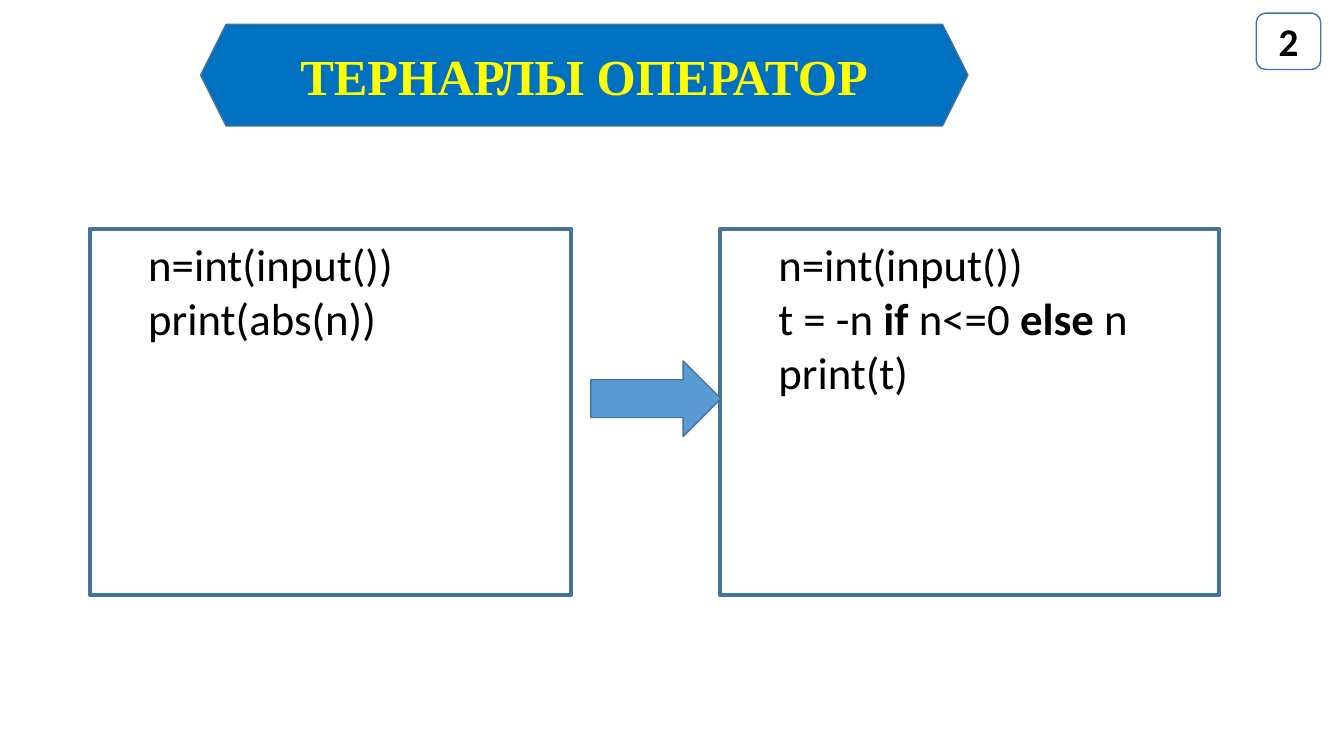
from pptx import Presentation
from pptx.dml.color import RGBColor
from pptx.enum.shapes import MSO_SHAPE as Shape
from pptx.enum.text import MSO_ANCHOR as Anchor, PP_ALIGN as Align
from pptx.util import Inches, Pt

BANNER_BLUE = RGBColor(0x00, 0x70, 0xC0)
ARROW_BLUE = RGBColor(0x5B, 0x9B, 0xD5)
OUTLINE = RGBColor(0x43, 0x73, 0x9E)
YELLOW = RGBColor(0xFF, 0xFF, 0x00)
BLACK = RGBColor(0x00, 0x00, 0x00)

CODE_TOP, CODE_HEIGHT = 2.27, 3.63
ABS_CODE = [[("n=int(input())", False)], [("print(abs(n))", False)]]
TERNARY_CODE = [
    [("n=int(input())", False)],
    [("t = -n ", False), ("if ", True), ("n<=0 ", False), ("else", True), (" n", False)],
    [("print(t)", False)],
]


def add_outlined(slide, kind, box, fill=None, weight=1):
    """Add a preset shape with the common outline and an optional fill."""
    shape = slide.shapes.add_shape(kind, *map(Inches, box))
    shape.shadow.inherit = False
    if fill is None:
        shape.fill.background()
    else:
        shape.fill.solid()
        shape.fill.fore_color.rgb = fill
    shape.line.color.rgb = OUTLINE
    shape.line.width = Pt(weight)
    return shape


def set_font(paragraph, name, size, color):
    """Set typeface, size and colour of a paragraph."""
    font = paragraph.font
    font.name, font.size, font.color.rgb = name, Pt(size), color


def add_label(slide, kind, box, text, name, size, color, fill=None):
    """Add a shape with one centred bold line."""
    shape = add_outlined(slide, kind, box, fill)
    shape.text_frame.vertical_anchor = Anchor.MIDDLE
    paragraph = shape.text_frame.paragraphs[0]
    paragraph.text = text
    paragraph.alignment = Align.CENTER
    set_font(paragraph, name, size, color)
    paragraph.font.bold = True


def add_code_panel(slide, box, lines):
    """Add a framed panel of indented code lines with bold keywords."""
    frame = add_outlined(slide, Shape.RECTANGLE, box, weight=3).text_frame
    frame.word_wrap = True
    frame.vertical_anchor = Anchor.TOP
    frame.margin_left = frame.margin_top = frame.margin_right = Inches(0.08)
    frame.margin_bottom = 0
    for index, line in enumerate(lines):
        paragraph = frame.add_paragraph() if index else frame.paragraphs[0]
        paragraph.level = 1
        paragraph.alignment = Align.LEFT
        properties = paragraph._p.get_or_add_pPr()
        properties.set("marL", str(Inches(0.5)))
        properties.set("indent", "0")
        set_font(paragraph, "Calibri", 32, BLACK)
        for text, bold in line:
            run = paragraph.add_run()
            run.text = text
            run.font.bold = bold


def build_slide(presentation):
    """Build the slide comparing abs with the ternary operator."""
    slide = presentation.slides.add_slide(presentation.slide_layouts[6])
    add_label(slide, Shape.HEXAGON, (1.99, 0.24, 7.61, 1.01), "ТЕРНАРЛЫ ОПЕРАТОР",
              "Times New Roman", 36, YELLOW, BANNER_BLUE)
    add_code_panel(slide, (0.89, CODE_TOP, 4.77, CODE_HEIGHT), ABS_CODE)
    add_code_panel(slide, (7.14, CODE_TOP, 4.95, CODE_HEIGHT), TERNARY_CODE)
    add_outlined(slide, Shape.RIGHT_ARROW, (5.86, 3.58, 1.29, 0.75), ARROW_BLUE)
    add_label(slide, Shape.ROUNDED_RECTANGLE, (12.46, 0.13, 0.64, 0.56), "2",
              "Calibri", 28, BLACK)


def main():
    """Create and save the presentation."""
    presentation = Presentation()
    presentation.slide_width = Inches(13.33)
    presentation.slide_height = Inches(7.5)
    build_slide(presentation)
    presentation.save("out.pptx")


if __name__ == "__main__":
    main()
